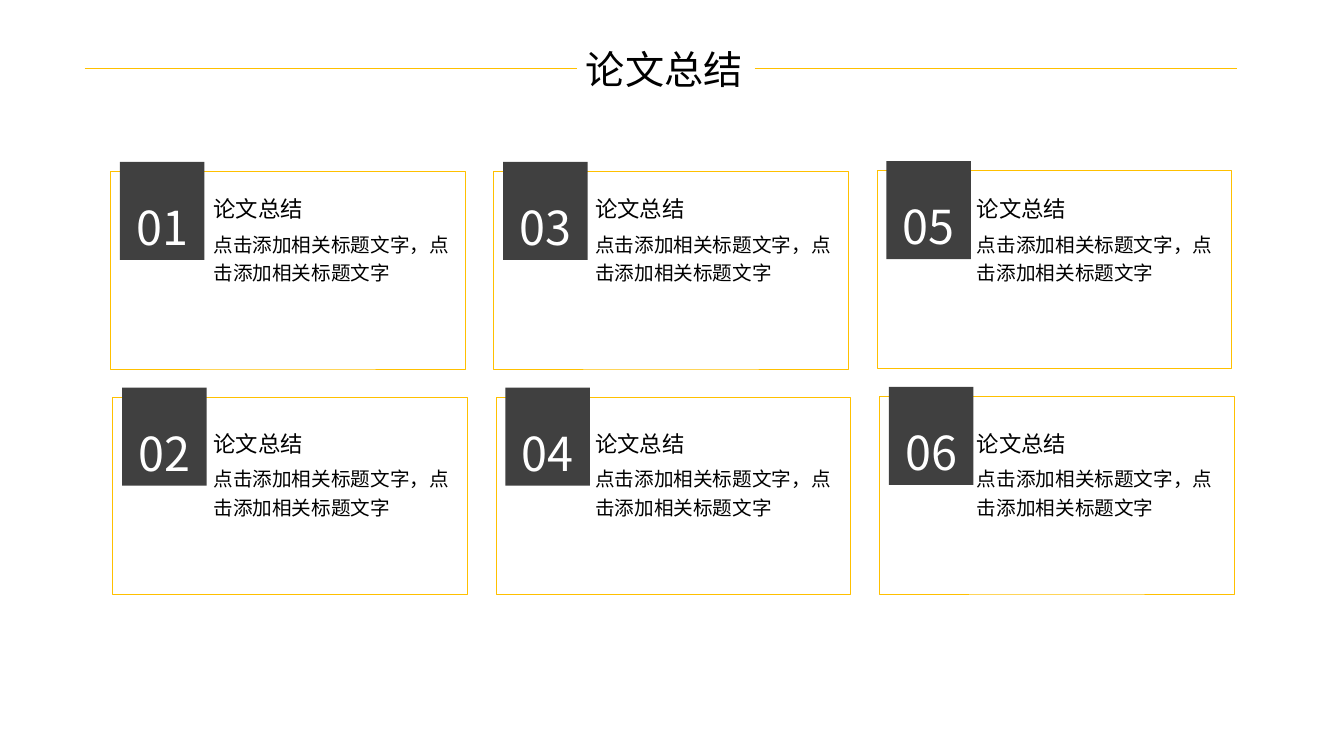
from dataclasses import dataclass

from lxml import etree
from pptx import Presentation
from pptx.dml.color import RGBColor
from pptx.enum.shapes import MSO_CONNECTOR, MSO_SHAPE
from pptx.enum.text import MSO_ANCHOR, MSO_AUTO_SIZE, PP_ALIGN
from pptx.oxml.ns import qn
from pptx.shapes.autoshape import Shape
from pptx.slide import Slide
from pptx.text.text import TextFrame
from pptx.util import Cm, Pt

RECTANGLE = MSO_SHAPE.RECTANGLE
STRAIGHT = MSO_CONNECTOR.STRAIGHT
TOP, BOTTOM = MSO_ANCHOR.TOP, MSO_ANCHOR.BOTTOM
LEFT, CENTER = PP_ALIGN.LEFT, PP_ALIGN.CENTER
NO_AUTOFIT = MSO_AUTO_SIZE.NONE

GOLD = RGBColor(0xFF, 0xC0, 0x00)
CHARCOAL = RGBColor(0x40, 0x40, 0x40)
BLACK = RGBColor(0x00, 0x00, 0x00)
WHITE = RGBColor(0xFF, 0xFF, 0xFF)
HEADING_FONT = "Noto Sans CJK JP"
BODY_FONT = "Noto Sans CJK SC"
HAIRLINE = Pt(0.5)

HEADING = "论文总结"
BODY = ["点击添加相关标题文字，点", "击添加相关标题文字"]
COLUMNS, ROWS = 3, 2
CARD_PITCH, TEXT_PITCH = 9.66, 9.62
RULE_Y = 1.73


@dataclass(frozen=True)
class Card:
    number: str
    left: float
    top: float
    text_left: float
    text_top: float


def make_card(column: int, row: int) -> Card:
    return Card(
        number=f"{column * ROWS + row + 1:02d}",
        left=2.78 + column * CARD_PITCH + row * 0.06,
        top=4.32 + row * 5.69 - (0.02 if column == COLUMNS - 1 else 0),
        text_left=5.38 + column * TEXT_PITCH,
        text_top=4.93 + row * 5.92,
    )


def write(frame: TextFrame, lines: list[str], *, size: float, font: str = BODY_FONT,
          color: RGBColor = BLACK, align: PP_ALIGN = LEFT, anchor: MSO_ANCHOR = TOP,
          spacing: float = 1.0, margin: float | None = None) -> None:
    frame.word_wrap = True
    frame.auto_size = NO_AUTOFIT
    frame.vertical_anchor = anchor
    if margin is not None:
        frame.margin_left = frame.margin_right = Cm(margin)
        frame.margin_top = frame.margin_bottom = Cm(margin)
    for index, line in enumerate(lines):
        para = frame.add_paragraph() if index else frame.paragraphs[0]
        para.alignment = align
        para.line_spacing = spacing
        span = para.add_run()
        span.text = line
        span.font.size = Pt(size)
        span.font.name = font
        span.font.color.rgb = color
        east_asian = etree.SubElement(span.font._element, qn("a:ea"))
        east_asian.set("typeface", font)


def add_box(page: Slide, left: float, top: float, width: float, height: float,
            fill: RGBColor | None = None, line: RGBColor | None = None) -> Shape:
    box = page.shapes.add_shape(RECTANGLE, Cm(left), Cm(top), Cm(width), Cm(height))
    box.shadow.inherit = False
    if fill is None:
        box.fill.background()
    else:
        box.fill.solid()
        box.fill.fore_color.rgb = fill
    if line is None:
        box.line.fill.background()
    else:
        box.line.color.rgb = line
        box.line.width = HAIRLINE
    return box


def add_text(page: Slide, left: float, top: float, width: float, height: float) -> TextFrame:
    return page.shapes.add_textbox(Cm(left), Cm(top), Cm(width), Cm(height)).text_frame


def draw_card(page: Slide, card: Card) -> None:
    add_box(page, card.left, card.top, 8.94, 4.98, line=GOLD)
    badge = add_box(page, card.left + 0.24, card.top - 0.24, 2.13, 2.47, fill=CHARCOAL)
    write(badge.text_frame, [card.number], size=33.4, color=WHITE, align=CENTER, anchor=BOTTOM)
    heading = add_text(page, card.text_left, card.text_top, 6.15, 0.81)
    write(heading, [HEADING], size=16, font=HEADING_FONT, margin=0)
    body = add_text(page, card.text_left, card.text_top + 0.81, 6.15, 2.59)
    write(body, BODY, size=14, spacing=1.2, margin=0)


def draw_title(page: Slide) -> None:
    title = page.shapes.title
    title.left, title.top, title.width, title.height = Cm(12.83), Cm(1.02), Cm(7.82), Cm(1.45)
    write(title.text_frame, [HEADING], size=28, font=HEADING_FONT, align=CENTER)


def draw_rule(page: Slide, start: float, end: float) -> None:
    rule = page.shapes.add_connector(STRAIGHT, Cm(start), Cm(RULE_Y), Cm(end), Cm(RULE_Y))
    rule.line.color.rgb = GOLD
    rule.line.width = HAIRLINE
    etree.SubElement(rule._element.spPr, qn("a:effectLst"))


def main() -> None:
    deck = Presentation()
    deck.slide_width, deck.slide_height = Cm(33.87), Cm(19.05)
    page = deck.slides.add_slide(deck.slide_layouts[5])
    draw_title(page)
    for row in range(ROWS):
        for column in range(COLUMNS):
            draw_card(page, make_card(column, row))
    for start, end in ((2.13, 14.53), (19.02, 31.17)):
        draw_rule(page, start, end)
    deck.save("out.pptx")


if __name__ == "__main__":
    main()
